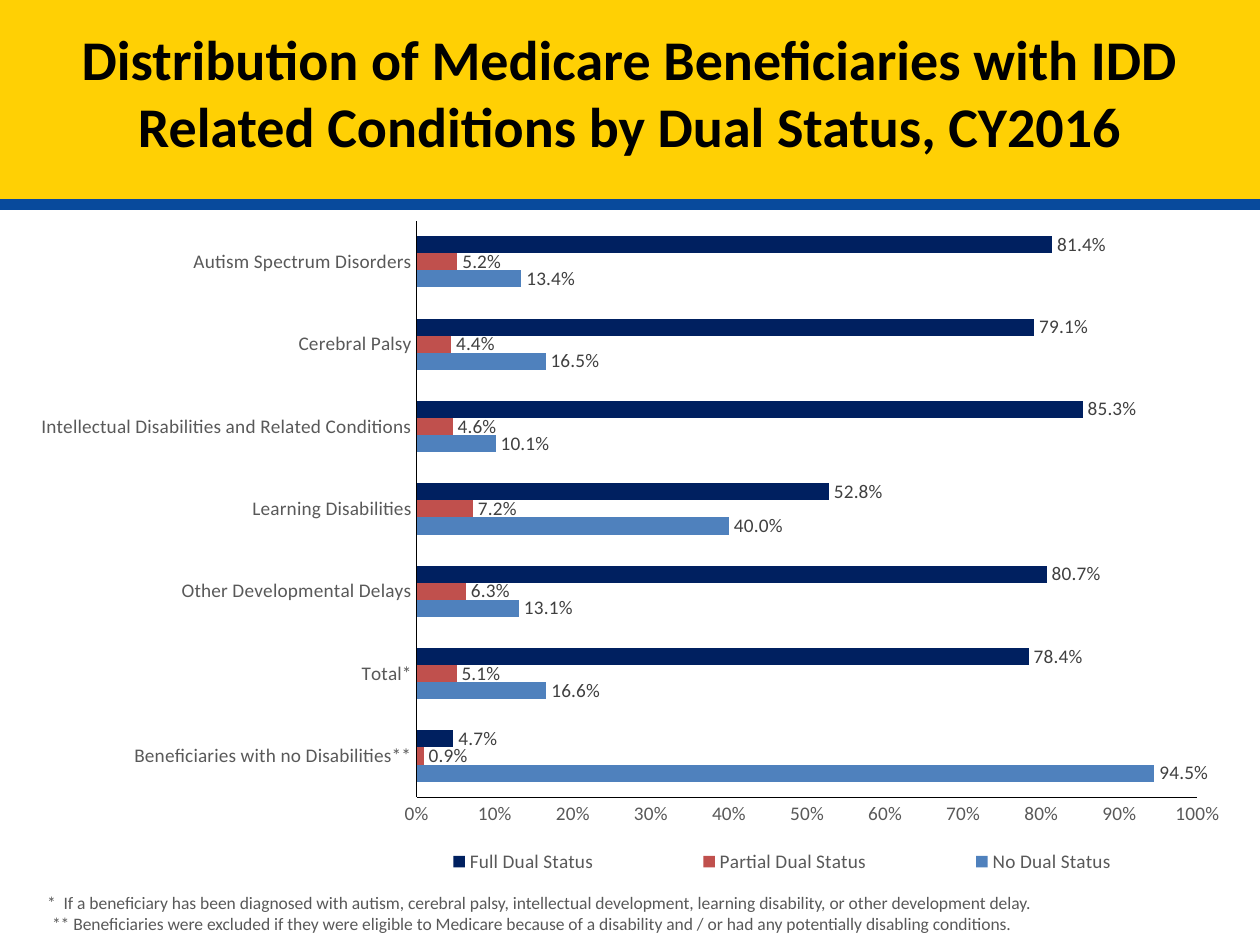
import pptx
import pptx.chart.data
import pptx.dml.color
import pptx.enum.chart
import pptx.enum.shapes
import pptx.enum.text
import pptx.oxml
import pptx.oxml.ns
import pptx.util

# Content
TITLE = [
    "Distribution of Medicare Beneficiaries with IDD",
    "Related Conditions by Dual Status, CY2016",
]
NOTES = [
    "*  If a beneficiary has been diagnosed with autism, cerebral palsy, intellectual "
    "development, learning disability, or other development delay.",
    "** Beneficiaries were excluded if they were eligible to Medicare because of a "
    "disability and / or had any potentially disabling conditions.",
]
CATEGORIES = [
    "Beneficiaries with no Disabilities**",
    "Total*",
    "Other Developmental Delays",
    "Learning Disabilities",
    "Intellectual Disabilities and Related Conditions",
    "Cerebral Palsy",
    "Autism Spectrum Disorders",
]
SERIES = [
    ("No Dual Status", "light_blue", [0.945, 0.166, 0.131, 0.400, 0.101, 0.165, 0.134]),
    ("Partial Dual Status", "red", [0.009, 0.051, 0.063, 0.072, 0.046, 0.044, 0.052]),
    ("Full Dual Status", "navy", [0.047, 0.784, 0.807, 0.528, 0.853, 0.791, 0.814]),
]
COLORS = {
    "yellow": "FFD004", "blue": "084A9C", "black": "000000", "gray": "595959",
    "dark_gray": "404040", "light_blue": "4F81BD", "red": "C0504D", "navy": "002060",
}
FONT = "Calibri"

# Layout, in px
WIDTH, HEIGHT = 1260, 945
BANNER_HEIGHT, STRIPE_HEIGHT = 199, 11
CHART_AREA = (21, 220, 1218, 665)
NOTES_AREA = (35, 886, 1190, 58)
PLOT_LAYOUT = {"x": 0.325, "y": 0, "w": 0.641, "h": 0.868}
LEGEND_LAYOUT = {"x": 0.27, "y": 0.935, "w": 0.71, "h": 0.06}


def px(length):
    return pptx.util.Emu(round(length * 914400 / 126))


def color(name):
    return pptx.dml.color.RGBColor.from_string(COLORS[name])


def style_font(font, size, name, bold=False):
    font.name, font.size, font.bold = FONT, pptx.util.Pt(size), bold
    font.color.rgb = color(name)


def write(frame, lines, size, name, bold=False, align="LEFT", anchor="TOP", insets=(12, 6, 12, 6)):
    frame.word_wrap = True
    frame.vertical_anchor = getattr(pptx.enum.text.MSO_ANCHOR, anchor)
    frame.margin_left, frame.margin_top, frame.margin_right, frame.margin_bottom = map(px, insets)
    for index, line in enumerate(lines):
        para = frame.paragraphs[0] if index == 0 else frame.add_paragraph()
        para.alignment = getattr(pptx.enum.text.PP_ALIGN, align)
        span = para.add_run()
        span.text = line
        style_font(span.font, size, name, bold)


def add_band(page, top, height, fill):
    band = page.shapes.add_shape(
        pptx.enum.shapes.MSO_SHAPE.RECTANGLE, 0, px(top), px(WIDTH), px(height))
    band.shadow.inherit = False
    band.fill.solid()
    band.fill.fore_color.rgb = color(fill)
    band.line.fill.background()
    return band


def manual_layout(fractions, inner=False):
    target = '<c:layoutTarget val="inner"/>' if inner else ""
    modes = "".join(f'<c:{key}Mode val="edge"/>' for key in "xy")
    values = "".join(f'<c:{key} val="{value}"/>' for key, value in fractions.items())
    return pptx.oxml.parse_xml(
        f'<c:layout {pptx.oxml.ns.nsdecls("c")}><c:manualLayout>'
        f"{target}{modes}{values}</c:manualLayout></c:layout>")


def style_axis(axis):
    axis.has_major_gridlines = False
    axis.major_tick_mark = axis.minor_tick_mark = pptx.enum.chart.XL_TICK_MARK.NONE
    style_font(axis.tick_labels.font, 11, "gray")
    axis.format.line.color.rgb = color("black")
    axis.format.line.width = pptx.util.Pt(0.75)


def add_status_chart(page):
    data = pptx.chart.data.CategoryChartData(number_format="0.0%")
    data.categories = CATEGORIES
    for name, _, values in SERIES:
        data.add_series(name, values)
    chart = page.shapes.add_chart(
        pptx.enum.chart.XL_CHART_TYPE.BAR_CLUSTERED, *map(px, CHART_AREA), data).chart
    chart.has_title = False
    style_font(chart.font, 11, "black")

    # Axes
    style_axis(chart.category_axis)
    style_axis(chart.value_axis)
    chart.value_axis.minimum_scale, chart.value_axis.maximum_scale = 0, 1
    chart.value_axis.major_unit = 0.1
    chart.value_axis.tick_labels.number_format = "0%"
    chart.value_axis.tick_labels.number_format_is_linked = False

    # Bars and their labels
    plot = chart.plots[0]
    plot.gap_width, plot.overlap, plot.vary_by_categories = 182, 0, False
    for series, (_, fill, _) in zip(plot.series, SERIES):
        series.format.fill.solid()
        series.format.fill.fore_color.rgb = color(fill)
        labels = series.data_labels
        labels.show_value = True
        labels.position = pptx.enum.chart.XL_LABEL_POSITION.OUTSIDE_END
        labels.number_format, labels.number_format_is_linked = "0.0%", False
        style_font(labels.font, 11, "dark_gray")

    # Legend and plot placement
    chart.has_legend = True
    legend = chart.legend
    legend.position = pptx.enum.chart.XL_LEGEND_POSITION.BOTTOM
    legend.include_in_layout = False
    style_font(legend.font, 11, "gray")
    areas = [
        (chart.element.find(".//" + pptx.oxml.ns.qn("c:plotArea")), PLOT_LAYOUT, True),
        (chart.element.find(".//" + pptx.oxml.ns.qn("c:legend")), LEGEND_LAYOUT, False),
    ]
    for area, fractions, inner in areas:
        for old in area.findall(pptx.oxml.ns.qn("c:layout")):
            area.remove(old)
        area.insert(0 if inner else 1, manual_layout(fractions, inner))


def main():
    deck = pptx.Presentation()
    deck.slide_width, deck.slide_height = px(WIDTH), px(HEIGHT)
    page = deck.slides.add_slide(deck.slide_layouts[6])

    # Title banner with its stripe
    add_band(page, BANNER_HEIGHT, STRIPE_HEIGHT, "blue")
    banner = add_band(page, 0, BANNER_HEIGHT, "yellow")
    write(banner.text_frame, TITLE, 32, "black", bold=True, align="CENTER",
          anchor="MIDDLE", insets=(12, 6, 12, 22))

    add_status_chart(page)

    # Footnotes, the second slightly indented
    box = page.shapes.add_textbox(*map(px, NOTES_AREA))
    write(box.text_frame, NOTES, 10, "gray")
    box.text_frame.paragraphs[1]._p.get_or_add_pPr().set("marL", str(px(5)))

    deck.save("out.pptx")


if __name__ == "__main__":
    main()
